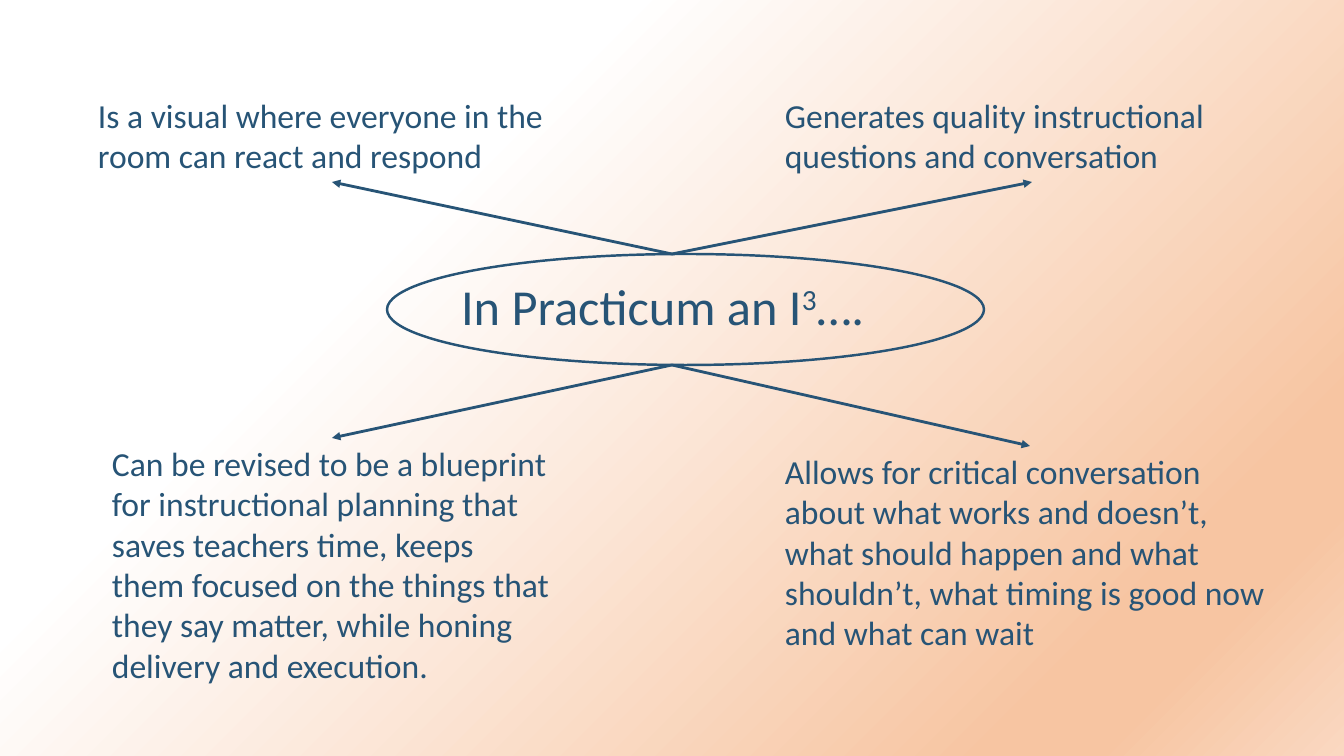
from lxml.etree import SubElement
from pptx import Presentation
from pptx.dml.color import RGBColor
from pptx.enum.shapes import MSO_CONNECTOR, MSO_SHAPE
from pptx.enum.text import MSO_ANCHOR, MSO_AUTO_SIZE, PP_ALIGN
from pptx.oxml.ns import qn
from pptx.util import Emu, Pt

PAGE_WIDTH, PAGE_HEIGHT = 1344, 756
EMU_PER_PX = 12192000 / PAGE_WIDTH

NAVY = RGBColor(0x27, 0x54, 0x76)
WHITE = RGBColor(0xFF, 0xFF, 0xFF)
PEACH = RGBColor(0xF7, 0xC5, 0xA2)
LIGHT_PEACH = RGBColor(0xFA, 0xD8, 0xC1)
BACKGROUND_STOPS = [(30, WHITE), (83, PEACH), (88, PEACH), (100, LIGHT_PEACH)]
FONT = "Calibri"

TOP, BOTTOM = 0, 2  # connection sites
TITLE_AREA = (451, 254, 442, 111)
OVAL_AREA = (387, 254, 597, 111)

# Area, text, side of the title the arrow leaves from, side of the box it reaches
IDEAS = [
    ((88, 90, 488, 92),
     "Is a visual where everyone in the room can react and respond", TOP, BOTTOM),
    ((775, 90, 514, 92),
     "Generates quality instructional questions and conversation", TOP, BOTTOM),
    ((775, 446, 510, 214),
     "Allows for critical conversation about what works and doesn’t, what should "
     "happen and what shouldn’t, what timing is good now and what can wait",
     BOTTOM, TOP),
    ((102, 438, 460, 254),
     "Can be revised to be a blueprint for instructional planning that saves "
     "teachers time, keeps them focused on the things that they say matter, "
     "while honing delivery and execution.", BOTTOM, TOP),
]


def px(length):
    return Emu(round(length * EMU_PER_PX))


def style_font(font, size):
    font.name = FONT
    font.size = Pt(size)
    font.color.rgb = NAVY


def paint_background(page):
    fill = page.background.fill
    fill.gradient()
    fill.gradient_angle = 315
    stops = page.element.find(".//" + qn("a:gsLst"))
    for stop in list(stops):
        stops.remove(stop)
    for percent, color in BACKGROUND_STOPS:
        stop = SubElement(stops, qn("a:gs"), pos=str(percent * 1000))
        SubElement(stop, qn("a:srgbClr"), val=str(color))


def write_title(page):
    title = page.shapes.title
    title.left, title.top, title.width, title.height = map(px, TITLE_AREA)
    frame = title.text_frame
    frame.word_wrap = True
    frame.auto_size = MSO_AUTO_SIZE.NONE
    frame.vertical_anchor = MSO_ANCHOR.MIDDLE
    para = frame.paragraphs[0]
    para.alignment = PP_ALIGN.LEFT
    para.line_spacing = 0.9
    style_font(para.font, 36)
    for text, baseline in [("In Practicum an I", 0), ("3", 30000), ("….", 0)]:
        span = para.add_run()
        span.text = text
        if baseline:
            span._r.get_or_add_rPr().set("baseline", str(baseline))
    return title


def add_idea(page, area, text):
    box = page.shapes.add_textbox(*map(px, area))
    frame = box.text_frame
    frame.word_wrap = True
    frame.auto_size = MSO_AUTO_SIZE.SHAPE_TO_FIT_TEXT
    para = frame.paragraphs[0]
    para.text = text
    style_font(para.font, 24)
    return box


def add_arrow(page, start, start_side, end, end_side):
    arrow = page.shapes.add_connector(MSO_CONNECTOR.STRAIGHT, 0, 0, 0, 0)
    arrow.begin_connect(start, start_side)
    arrow.end_connect(end, end_side)
    arrow.line.color.rgb = NAVY
    arrow.line.width = Pt(2)
    SubElement(arrow.line._get_or_add_ln(), qn("a:tailEnd"), type="triangle")
    SubElement(arrow._element.spPr, qn("a:effectLst"))


def add_oval(page):
    oval = page.shapes.add_shape(MSO_SHAPE.OVAL, *map(px, OVAL_AREA))
    oval.shadow.inherit = False
    oval.fill.background()
    oval.line.color.rgb = NAVY
    oval.line.width = Pt(1.75)


def main():
    deck = Presentation()
    deck.slide_width, deck.slide_height = px(PAGE_WIDTH), px(PAGE_HEIGHT)
    page = deck.slides.add_slide(deck.slide_layouts.get_by_name("Title Only"))
    paint_background(page)
    title = write_title(page)
    boxes = [add_idea(page, area, text) for area, text, _, _ in IDEAS]
    for box, (_, _, title_side, box_side) in zip(boxes, IDEAS):
        add_arrow(page, title, title_side, box, box_side)
    add_oval(page)
    deck.save("out.pptx")


if __name__ == "__main__":
    main()
